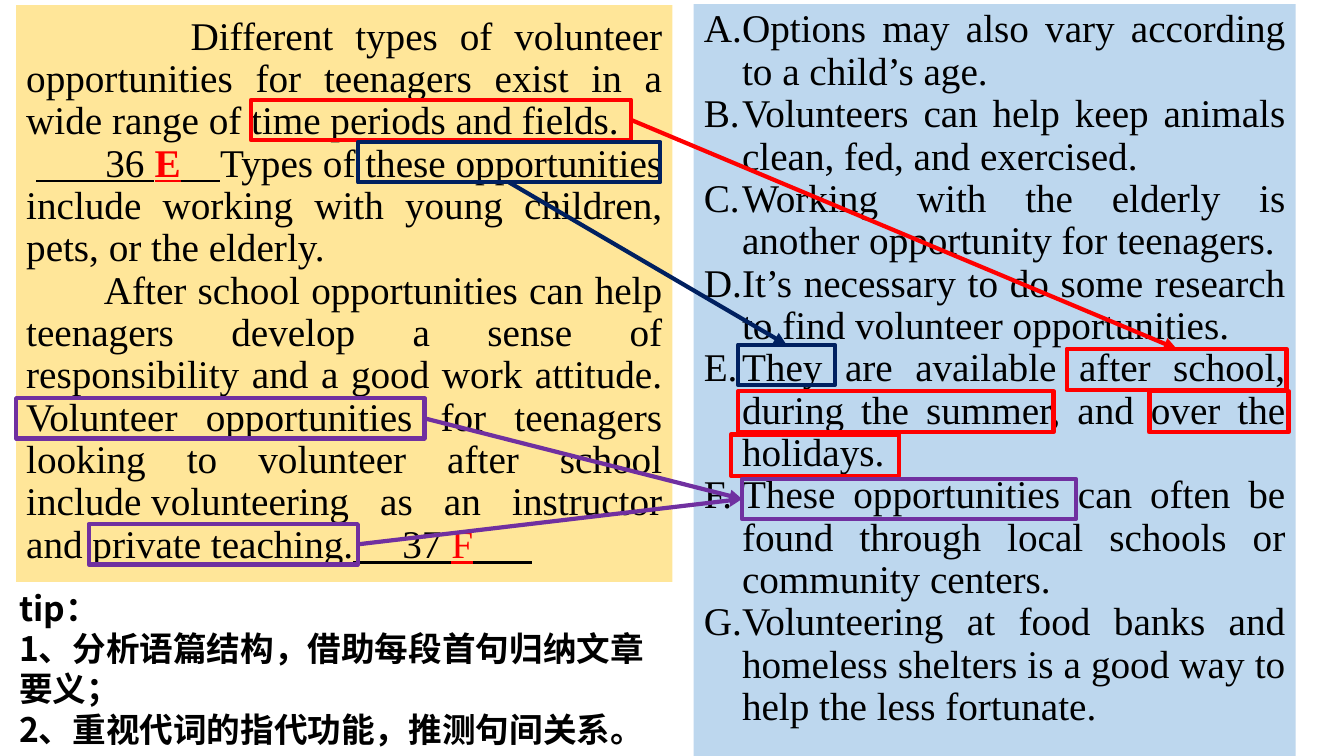
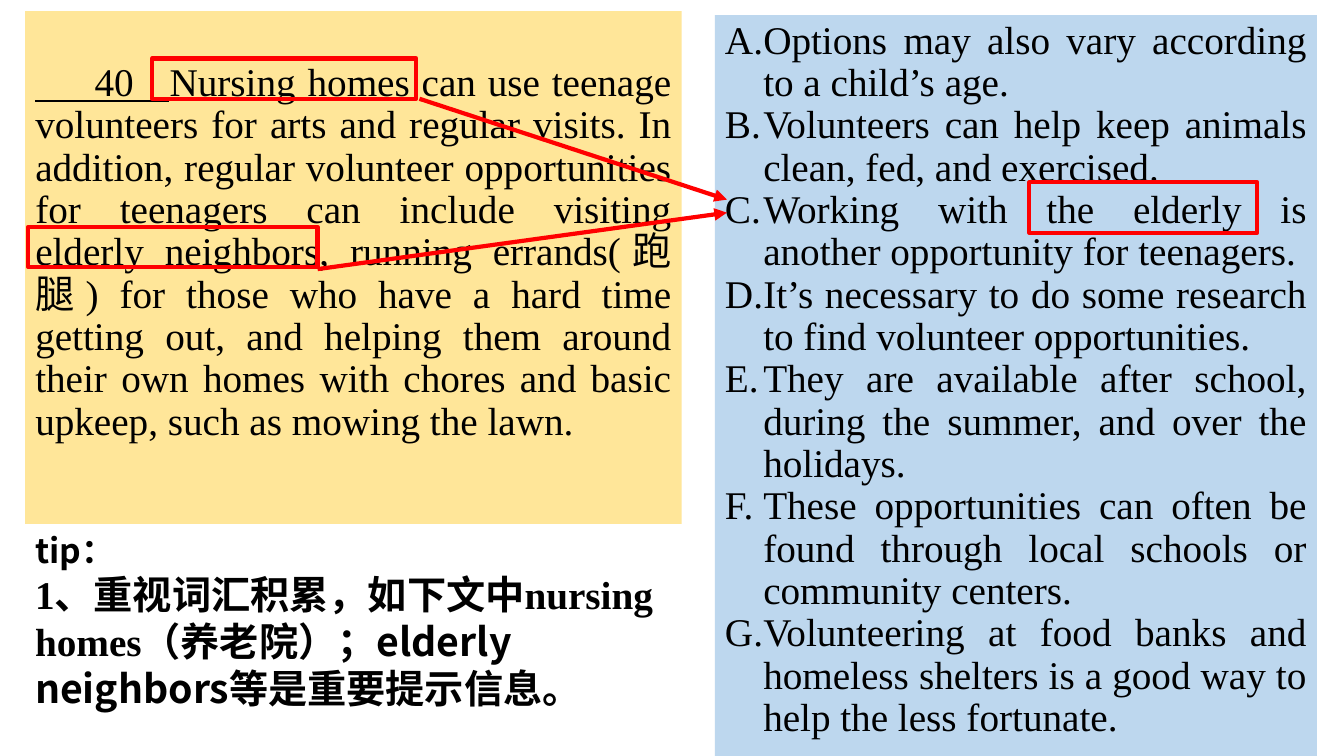
"""Build two reading slides that link a passage to its answer options."""
import pptx
import pptx.util
import pptx.dml.color
import pptx.enum.shapes
import pptx.enum.text
import pptx.oxml.ns
from lxml import etree

Inches = pptx.util.Inches
Pt = pptx.util.Pt
RGBColor = pptx.dml.color.RGBColor
qn = pptx.oxml.ns.qn

BLACK = RGBColor(0x00, 0x00, 0x00)
WHITE = RGBColor(0xFF, 0xFF, 0xFF)
RED = RGBColor(0xFF, 0x00, 0x00)
NAVY = RGBColor(0x00, 0x20, 0x60)
PURPLE = RGBColor(0x70, 0x30, 0xA0)
YELLOW = RGBColor(0xFF, 0xE6, 0x99)
BLUE = RGBColor(0xBD, 0xD7, 0xEE)
SERIF = "Times New Roman"
SANS = "Noto Sans CJK SC"
HIGH = 7.5
TIE = chr(160)
TOP, LEFT, BOTTOM, RIGHT = range(4)

OPTIONS = [
    "Options may also vary according to a child’s age.",
    "Volunteers can help keep animals clean, fed, and exercised.",
    "Working with the elderly is another opportunity for teenagers.",
    "It’s necessary to do some research to find volunteer opportunities.",
    "They are available after school, during the summer, and over the holidays.",
    "These opportunities can often be found through local schools or community centers.",
    "Volunteering at food banks and homeless shelters is a good way to help the less fortunate.",
]

PAGES = [
    {
        "left": (0.16, 0.05), "right": (6.88, 0.04), "inset": 0.11,
        "text": [
            (1.63, [("Different types of volunteer opportunities for teenagers exist in a "
                     "wide range of time periods and fields.", "")]),
            (0.1, [("       36 ", "u"), ("E", "urb"), ("    ", "u"),
                   ("Types of these opportunities include working with young children, "
                    "pets, or the elderly.", "")]),
            (0.77, [("After school opportunities can help teenagers develop a sense of "
                     "responsibility and a good work attitude. Volunteer opportunities for "
                     "teenagers looking to volunteer after school "
                     f"include{TIE}volunteering as an instructor and{TIE}private teaching.", ""),
                    ("     37 ", "u"), ("F", "ur"), ("      ", "u")]),
        ],
        "boxes": [
            (RED, 2.49, 0.99, 3.77, 0.4),
            (RED, 10.58, 3.46, 2.18, 0.41),
            (RED, 7.32, 3.88, 3.13, 0.41),
            (RED, 11.4, 3.88, 1.38, 0.41),
            (RED, 7.25, 4.31, 1.67, 0.41),
            (NAVY, 3.55, 1.41, 3, 0.4),
            (NAVY, 7.32, 3.42, 0.96, 0.4),
            (PURPLE, 0.88, 5.2, 2.67, 0.4),
            (PURPLE, 0.16, 3.95, 4.05, 0.4),
            (PURPLE, 7.36, 4.75, 3.31, 0.4),
        ],
        "joins": [(5, BOTTOM, 6, TOP), (0, RIGHT, 1, TOP),
                  (7, RIGHT, 9, LEFT), (8, RIGHT, 9, LEFT)],
        "arrows": [],
        "tip": (0.09, 5.78),
        "notes": [
            [("tip：", 24, SANS)],
            [("1、分析语篇结构，借助每段首句归纳文章要义；", 24, SANS)],
            [("2、重视代词的指代功能，推测句间关系。", 24, SANS)],
        ],
    },
    {
        "left": (0.25, 0.11), "right": (7.09, 0.15), "inset": 0.51,
        "text": [
            (0, [("     40   ", "u"),
                 ("Nursing homes can use teenage volunteers for arts and regular visits. In "
                  "addition, regular volunteer opportunities for teenagers can include "
                  "visiting elderly neighbors, running errands(跑腿) for those who have a "
                  "hard time getting out, and helping them around their own homes with "
                  "chores and basic upkeep, such as mowing the lawn.", "")]),
        ],
        "boxes": [
            (RED, 1.51, 0.58, 2.62, 0.4),
            (RED, 10.21, 1.81, 2.26, 0.5),
            (RED, 0.28, 2.25, 2.87, 0.4),
        ],
        "joins": [],
        "arrows": [(4.16, 0.98, 7.21, 1.98), (3.15, 2.67, 7.21, 2.11)],
        "tip": (0.25, 5.21),
        "notes": [
            [("tip：", 24, SANS)],
            [("1、重视词汇积累，如下文中nursing homes（", 28, SERIF),
             ("养老院）；elderly neighbors等是重要提示信息。", 28, SANS)],
        ],
    },
]


def style(run, size, face, flags=""):
    font = run.font
    font.size = Pt(size)
    font.bold = "b" in flags
    font.underline = "u" in flags
    font.color.rgb = RED if "r" in flags else BLACK
    font.name = face
    etree.SubElement(run._r.get_or_add_rPr(), qn("a:ea"), typeface=SANS)


def arrange(par, margin, indent, bullet, **attrs):
    par.alignment = pptx.enum.text.PP_ALIGN.JUSTIFY
    par.line_spacing = 0.9
    par.space_before = Pt(0)
    props = par._p.get_or_add_pPr()
    props.set("marL", str(Inches(margin)))
    props.set("indent", str(Inches(indent)))
    etree.SubElement(props, qn("a:buFont"), typeface=SERIF)
    etree.SubElement(props, qn(bullet), **attrs)


deck = pptx.Presentation()
deck.slide_width = Inches(13.33)
deck.slide_height = Inches(HIGH)

for page in PAGES:
    slide = deck.slides.add_slide(deck.slide_layouts[3])
    shapes = slide.shapes
    title, left, right = slide.placeholders
    title.element.getparent().remove(title.element)

    for panel, side, width, fill in ((left, "left", 6.51, YELLOW), (right, "right", 5.97, BLUE)):
        x, y = page[side]
        panel.left, panel.top = Inches(x), Inches(y)
        panel.width, panel.height = Inches(width), Inches(HIGH - y)
        panel.fill.solid()
        panel.fill.fore_color.rgb = fill
        panel.text_frame.auto_size = pptx.enum.text.MSO_AUTO_SIZE.NONE

    frame = left.text_frame
    frame.margin_top = Inches(page["inset"])
    frame.text = "\n".join("" for part in page["text"])
    for par, (indent, parts) in zip(frame.paragraphs, page["text"]):
        arrange(par, 0, indent, "a:buNone")
        for words, flags in parts:
            run = par.add_run()
            run.text = words
            style(run, 28, SERIF, flags)

    right.text_frame.text = "\n".join(OPTIONS)
    for par in right.text_frame.paragraphs:
        arrange(par, 0.38, -0.38, "a:buAutoNum", type="alphaUcPeriod")
        style(par.runs[0], 28, SERIF)

    boxes = []
    for color, *place in page["boxes"]:
        box = shapes.add_shape(pptx.enum.shapes.MSO_SHAPE.RECTANGLE, *map(Inches, place))
        box.shadow.inherit = False
        box.fill.background()
        box.line.color.rgb = color
        box.line.width = Pt(3)
        boxes.append(box)

    lines = []
    for start, out, end, into in page["joins"]:
        line = shapes.add_connector(pptx.enum.shapes.MSO_CONNECTOR.STRAIGHT, 0, 0, 0, 0)
        line.begin_connect(boxes[start], out)
        line.end_connect(boxes[end], into)
        lines.append((line, page["boxes"][start][0]))
    for ends in page["arrows"]:
        line = shapes.add_connector(pptx.enum.shapes.MSO_CONNECTOR.STRAIGHT, *map(Inches, ends))
        lines.append((line, RED))
    for line, color in lines:
        line.line.color.rgb = color
        line.line.width = Pt(3)
        etree.SubElement(line.line._get_or_add_ln(), qn("a:tailEnd"), type="triangle")
        etree.SubElement(line._element.spPr, qn("a:effectLst"))

    x, y = page["tip"]
    tip = shapes.add_textbox(Inches(x), Inches(y), Inches(6.58), Inches(HIGH - y))
    tip.fill.solid()
    tip.fill.fore_color.rgb = WHITE
    tip.line.color.rgb = WHITE
    tip.line.width = Pt(1.5)
    frame = tip.text_frame
    frame.word_wrap = True
    frame.text = "\n".join("" for note in page["notes"])
    for par, note in zip(frame.paragraphs, page["notes"]):
        for words, size, face in note:
            run = par.add_run()
            run.text = words
            style(run, size, face, "b")

deck.save("out.pptx")
